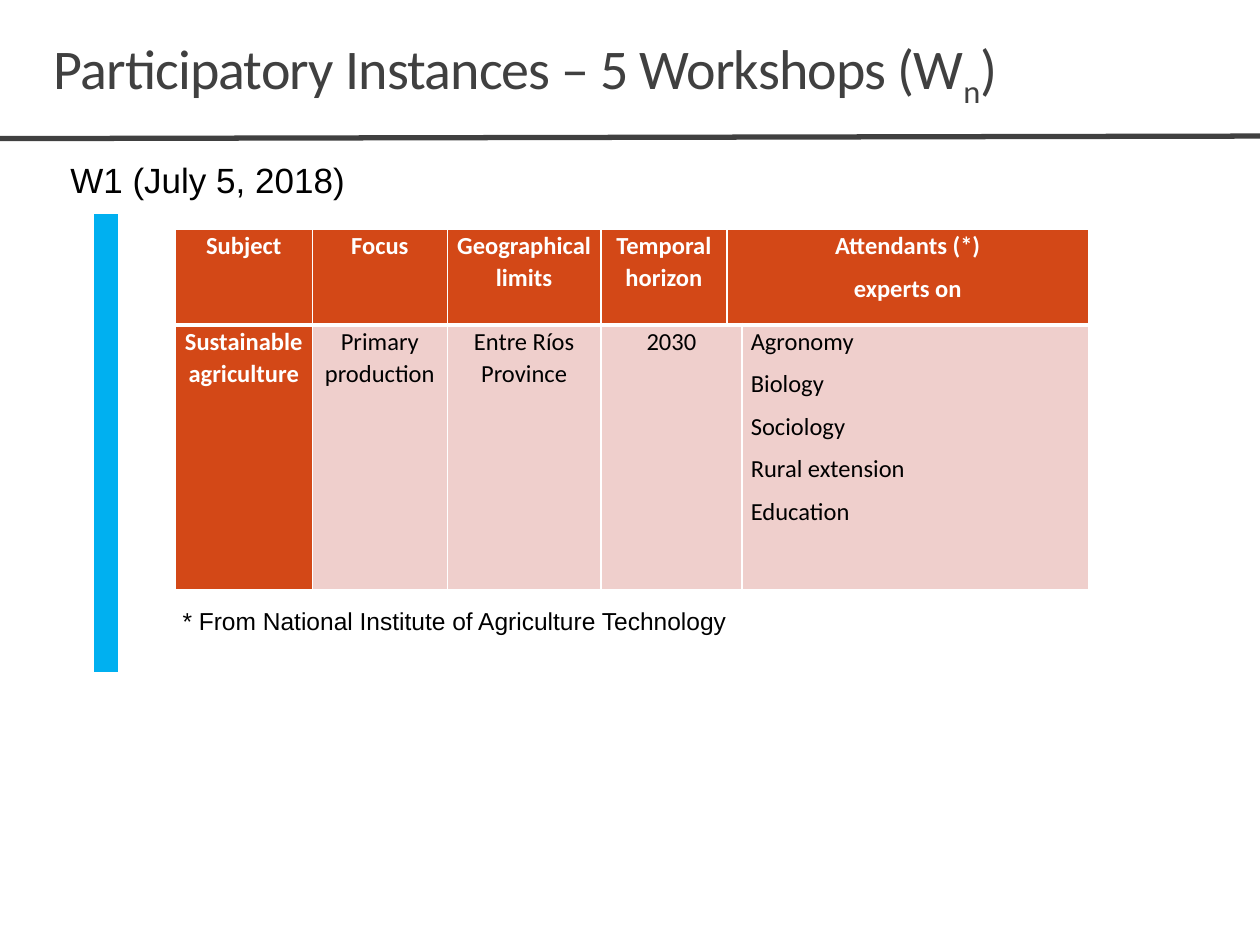
from lxml import etree
from pptx import Presentation
from pptx.dml.color import RGBColor
from pptx.enum.shapes import MSO_CONNECTOR
from pptx.enum.text import MSO_ANCHOR, PP_ALIGN
from pptx.oxml.ns import qn
from pptx.util import Inches, Pt

CENTER, LEFT = PP_ALIGN.CENTER, PP_ALIGN.LEFT
TOP, MIDDLE, BOTTOM = MSO_ANCHOR.TOP, MSO_ANCHOR.MIDDLE, MSO_ANCHOR.BOTTOM
STRAIGHT = MSO_CONNECTOR.STRAIGHT

COLORS = {
    "title": "404040", "accent": "00B0F0", "header": "D34817",
    "body": "EFCFCC", "white": "FFFFFF", "black": "000000",
}

TITLE = [("Participatory Instances – 5 Workshops (W", 0), ("n", -25000), (")", 0)]
WORKSHOP = [("W1 (July 5, 2018)", 0)]
FOOTNOTE = [("* From National Institute of Agriculture Technology", 0)]

LINES = [
    ((0, 1.1), (10, 1.08), "title", 3),
    ((0.84, 1.7), (0.84, 5.33), "accent", 14),
]

TABLE_BOX = (1.39, 1.82, 7.25, 2.85)
COLUMN_WIDTHS = [1.09, 1.07, 1.22, 1, 0.12, 2.75]
ROW_HEIGHTS = [0.76, 2.1]
TABLE_ROWS = [
    {0: ["Subject"], 1: ["Focus"], 2: ["Geographical limits"],
     3: ["Temporal horizon"], 4: ["Attendants (*)", "experts on"]},
    {0: ["Sustainable agriculture"], 1: ["Primary production"],
     2: ["Entre Ríos Province"], 3: ["2030"],
     5: ["Agronomy", "Biology", "Sociology", "Rural extension", "Education"]},
]
MERGES = [((0, 4), (0, 5)), ((1, 3), (1, 4))]


def color(name):
    return RGBColor.from_string(COLORS[name])


def style_font(font, name, size, color_name, bold=False):
    font.name, font.size, font.bold = name, Pt(size), bold
    font.color.rgb = color(color_name)


def add_text(slide, box, runs, font, size, color_name, anchor, wrap=True, spacing=0):
    shape = slide.shapes.add_textbox(*map(Inches, box))
    frame = shape.text_frame
    frame.word_wrap, frame.vertical_anchor = wrap, anchor
    paragraph = frame.paragraphs[0]
    style_font(paragraph.font, font, size, color_name)
    for text, baseline in runs:
        run = paragraph.add_run()
        run.text = text
        properties = run._r.get_or_add_rPr()
        if spacing:
            properties.set("spc", str(spacing))
        if baseline:
            properties.set("baseline", str(baseline))
    return paragraph


def add_line(slide, start, end, color_name, width):
    line = slide.shapes.add_connector(STRAIGHT, *map(Inches, start + end))
    line.line.color.rgb = color(color_name)
    line.line.width = Pt(width)
    etree.SubElement(line._element.spPr, qn("a:effectLst"))


def set_borders(cell, bottom_width):
    properties = cell._tc.get_or_add_tcPr()
    widths = {"lnL": 1, "lnR": 1, "lnT": 1, "lnB": bottom_width}
    for position, (side, width) in enumerate(widths.items()):
        border = etree.Element(qn(f"a:{side}"), w=str(Pt(width)))
        fill = etree.SubElement(border, qn("a:solidFill"))
        etree.SubElement(fill, qn("a:srgbClr"), val=COLORS["white"])
        properties.insert(position, border)


def fill_cell(cell, lines, is_header, bold, alignment):
    cell.fill.solid()
    cell.fill.fore_color.rgb = color("header" if bold else "body")
    cell.margin_left = cell.margin_right = Inches(0.07)
    cell.margin_top = cell.margin_bottom = 0
    set_borders(cell, 3 if is_header else 1)
    frame = cell.text_frame
    for index, text in enumerate(lines):
        paragraph = frame.add_paragraph() if index else frame.paragraphs[0]
        paragraph.text = text
        paragraph.alignment = alignment
        paragraph.line_spacing = 1.07
        paragraph.space_before = paragraph.space_after = Pt(3)
        style_font(paragraph.font, "Calibri", 14, "white" if bold else "black", bold)


def add_workshop_table(slide):
    table = slide.shapes.add_table(
        len(ROW_HEIGHTS), len(COLUMN_WIDTHS), *map(Inches, TABLE_BOX)).table
    for column, width in zip(table.columns, COLUMN_WIDTHS):
        column.width = Inches(width)
    for row, height in zip(table.rows, ROW_HEIGHTS):
        row.height = Inches(height)
    for first, last in MERGES:
        table.cell(*first).merge(table.cell(*last))
    for row, contents in enumerate(TABLE_ROWS):
        for column in range(len(COLUMN_WIDTHS)):
            is_header = row == 0
            lines = contents.get(column, [])
            alignment = LEFT if len(lines) > 2 else CENTER
            fill_cell(table.cell(row, column), lines, is_header,
                      is_header or column == 0, alignment)


def main():
    presentation = Presentation()
    presentation.slide_width, presentation.slide_height = Inches(10), Inches(7.5)
    slide = presentation.slides.add_slide(presentation.slide_layouts[6])
    title = add_text(slide, (0.33, 0.26, 9.18, 0.6), TITLE, "Calibri", 32, "title",
                     BOTTOM, spacing=-50)
    title.line_spacing = 0.85
    for line in LINES:
        add_line(slide, *line)
    add_workshop_table(slide)
    add_text(slide, (0.46, 1.22, 8.17, 0.41), WORKSHOP, "Arial", 20, "black", MIDDLE)
    add_text(slide, (1.35, 4.76, 4.59, 0.34), FOOTNOTE, "Arial", 14, "black", TOP,
             wrap=False)
    presentation.save("out.pptx")


if __name__ == "__main__":
    main()
